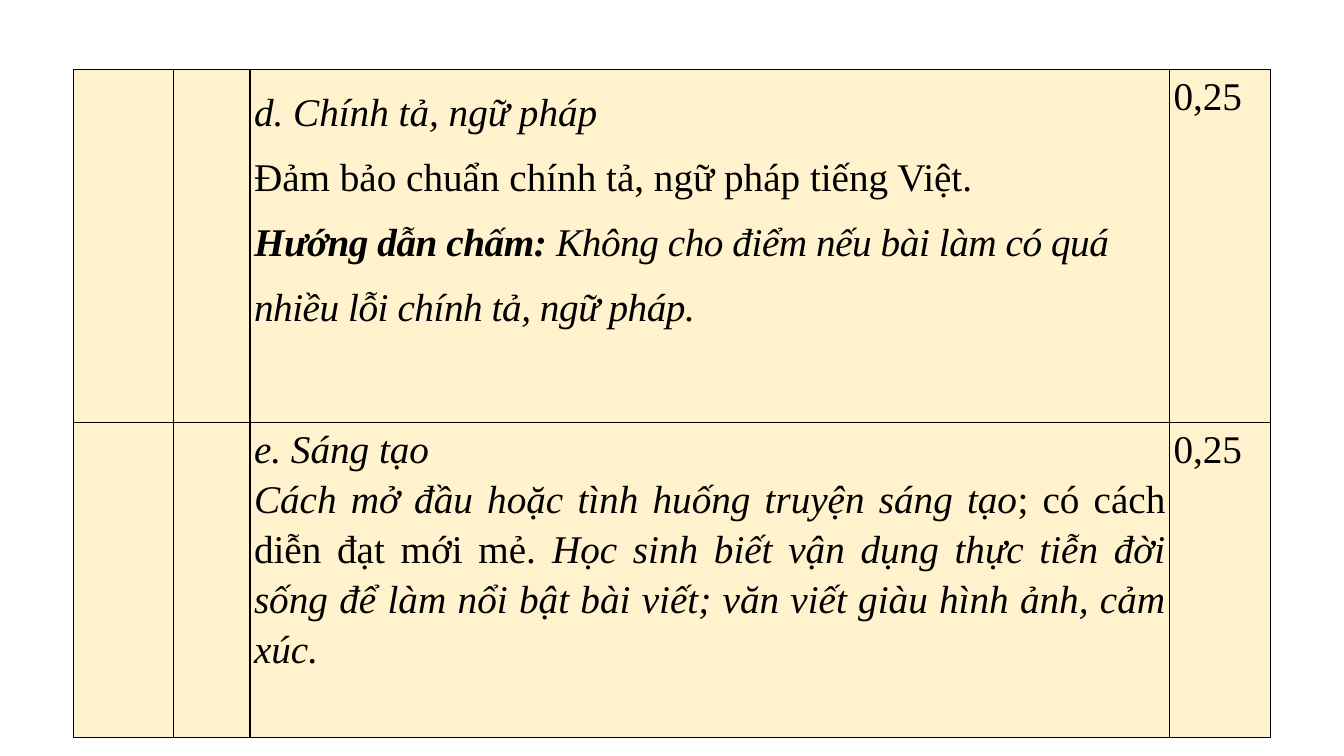
from lxml.etree import SubElement
from pptx import Presentation
from pptx.dml.color import RGBColor
from pptx.enum.text import PP_ALIGN
from pptx.oxml.ns import qn
from pptx.util import Inches, Pt

BLACK = RGBColor(0x00, 0x00, 0x00)
WHITE = RGBColor(0xFF, 0xFF, 0xFF)
CREAM = RGBColor(0xFF, 0xF2, 0xCC)

SLIDE_WIDTH, SLIDE_HEIGHT = 13.33, 7.5
COLUMN_WIDTHS = [0.99, 0.76, 9.12, 1]
ROW_HEIGHTS = [3.5, 3.13]
TABLE_LEFT, TABLE_TOP = 0.73, 0.69

# Each run is its text and the style letters that apply: b, i, and t for tight spacing
SPELLING = [
    [("d. Chính tả, ngữ pháp", "i")],
    [("Đảm bảo chuẩn chính tả, ngữ pháp tiếng Việt.", "")],
    [("Hướng dẫn chấm: ", "bit"),
     ("Không cho điểm nếu bài làm có quá nhiều lỗi chính tả, ngữ pháp.", "it")],
]
CREATIVITY = [
    [("e. Sáng tạo", "i")],
    [("Cách mở đầu hoặc tình huống truyện sáng tạo", "i"),
     ("; có cách diễn đạt mới mẻ. ", ""),
     ("Học sinh biết vận dụng thực tiễn đời sống để làm nổi bật bài viết; "
      "văn viết giàu hình ảnh, cảm xúc.", "i")],
]
SCORE = [[("0,25", "")]]

# Criterion, its line spacing and its alignment, one entry per table row
CRITERIA = [
    (SPELLING, 1.5, PP_ALIGN.LEFT),
    (CREATIVITY, 1.15, PP_ALIGN.JUSTIFY),
]


class RubricSlide:
    font_name = "Times New Roman"
    font_size = Pt(28)
    border_width = Pt(1)
    side_margin = Inches(0.04)

    def __init__(self, presentation):
        self.slide = presentation.slides.add_slide(presentation.slide_layouts[6])
        self.slide.background.fill.solid()
        self.slide.background.fill.fore_color.rgb = WHITE

    def add_grid(self, left, top, widths, heights):
        shape = self.slide.shapes.add_table(
            len(heights), len(widths), Inches(left), Inches(top),
            Inches(sum(widths)), Inches(sum(heights)))
        table = shape.table
        for column, width in zip(table.columns, widths):
            column.width = Inches(width)
        for row, height in zip(table.rows, heights):
            row.height = Inches(height)
        for cell in table.iter_cells():
            self.style_cell(cell)
        return table

    def style_cell(self, cell):
        cell.margin_left = cell.margin_right = self.side_margin
        cell.margin_top = cell.margin_bottom = 0
        properties = cell._tc.get_or_add_tcPr()
        for side in ("lnL", "lnR", "lnT", "lnB"):
            line = SubElement(properties, qn(f"a:{side}"), w=str(self.border_width))
            fill = SubElement(line, qn("a:solidFill"))
            SubElement(fill, qn("a:srgbClr"), val=str(BLACK))
        cell.fill.solid()
        cell.fill.fore_color.rgb = CREAM

    def add_cell_text(self, cell, paragraphs, line_spacing, alignment=PP_ALIGN.LEFT):
        frame = cell.text_frame
        for index, runs in enumerate(paragraphs):
            paragraph = frame.add_paragraph() if index else frame.paragraphs[0]
            paragraph.line_spacing = line_spacing
            paragraph.alignment = alignment
            for text, style in runs:
                self.add_run(paragraph, text, style)

    def add_run(self, paragraph, text, style):
        run = paragraph.add_run()
        run.text = text
        font = run.font
        font.name = self.font_name
        font.size = self.font_size
        font.color.rgb = BLACK
        font.bold = "b" in style
        font.italic = "i" in style
        if "t" in style:
            run._r.get_or_add_rPr().set("spc", "-30")


def main():
    presentation = Presentation()
    presentation.slide_width = Inches(SLIDE_WIDTH)
    presentation.slide_height = Inches(SLIDE_HEIGHT)

    # Scoring table: two empty columns, the criterion and its score
    rubric = RubricSlide(presentation)
    table = rubric.add_grid(TABLE_LEFT, TABLE_TOP, COLUMN_WIDTHS, ROW_HEIGHTS)
    for row, (criterion, line_spacing, alignment) in enumerate(CRITERIA):
        rubric.add_cell_text(table.cell(row, 2), criterion, line_spacing, alignment)
        rubric.add_cell_text(table.cell(row, 3), SCORE, 1.15)

    presentation.save("out.pptx")


if __name__ == "__main__":
    main()
